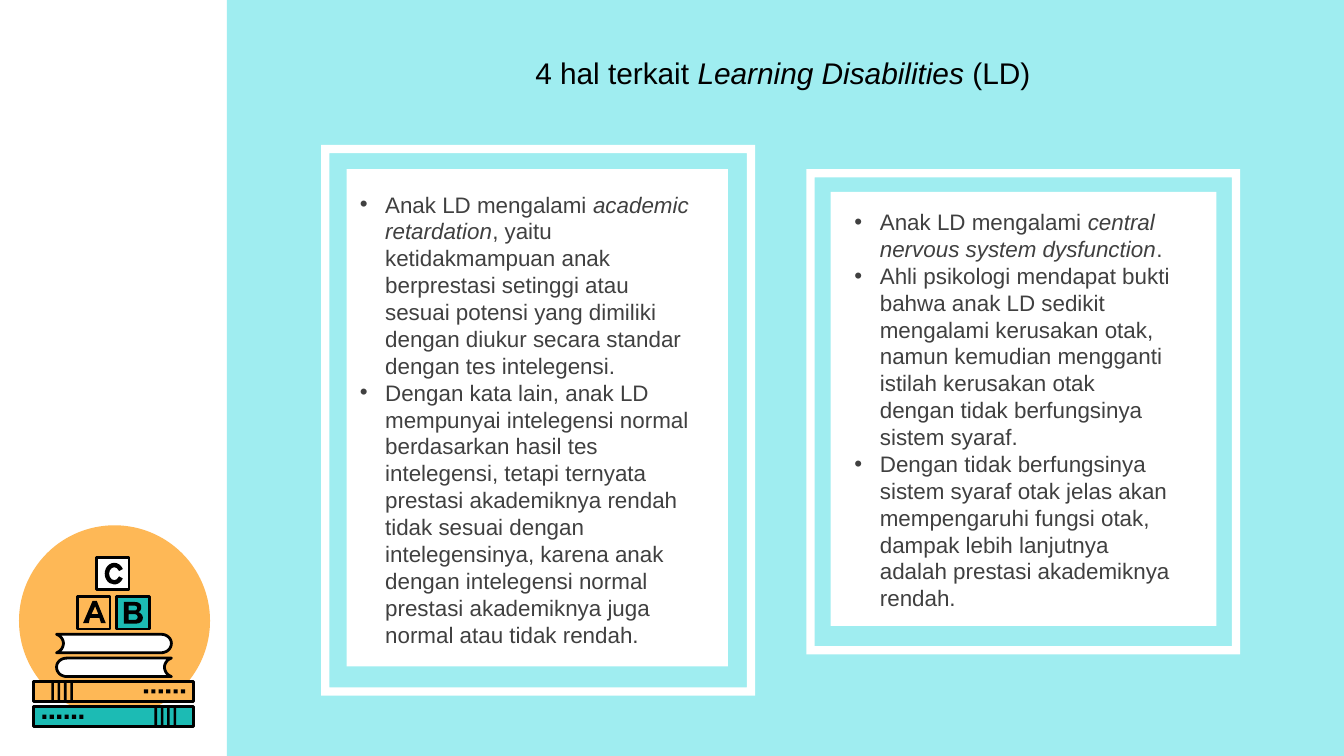
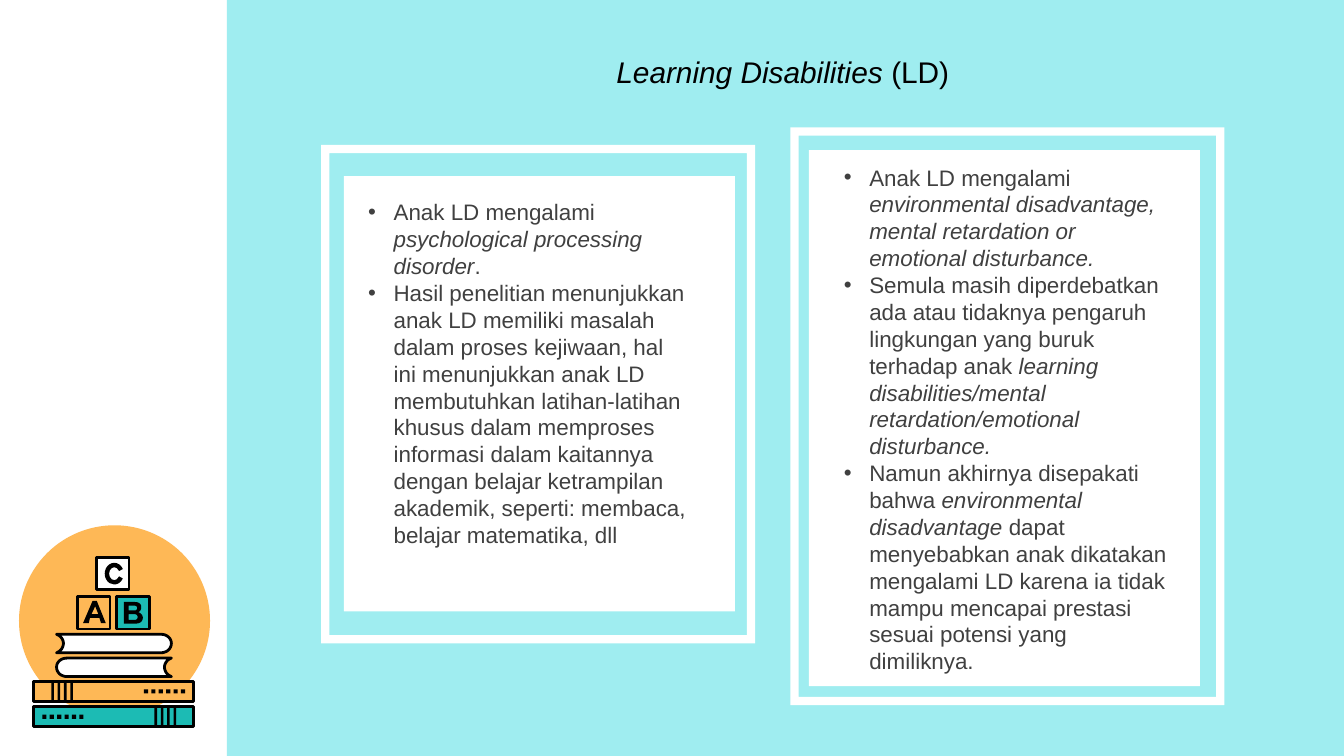
from lxml.etree import SubElement
from pptx import Presentation
from pptx.dml.color import RGBColor
from pptx.enum.shapes import MSO_SHAPE
from pptx.enum.text import PP_ALIGN
from pptx.oxml.ns import qn
from pptx.util import Cm, Pt

WHITE = RGBColor(0xFF, 0xFF, 0xFF)
BLACK = RGBColor(0, 0, 0)
GREY = RGBColor(0x40, 0x40, 0x40)
AQUA = RGBColor(0x9F, 0xED, 0xF0)
AMBER = RGBColor(0xFE, 0xB8, 0x56)
TEAL = RGBColor(0x1C, 0xBB, 0xB4)
FONT = "Arial"
WIDE, HIGH = 25.4, 14.29

# Outlines in cm: pairs are corners, sixes are Bezier curves.
LETTER_A = [
    [(1.75, 11.36), (1.83, 11.36), (2, 11.78), (1.91, 11.78), (1.88, 11.68),
     (1.7, 11.68), (1.68, 11.78), (1.57, 11.78)],
    [(1.8, 11.46), (1.73, 11.61), (1.86, 11.61)],
]
LETTER_B = [
    [(2.34, 11.38), (2.55, 11.38), (2.63, 11.38, 2.67, 11.42, 2.67, 11.47),
     (2.67, 11.53, 2.65, 11.56, 2.61, 11.57),
     (2.66, 11.59, 2.7, 11.62, 2.7, 11.68),
     (2.7, 11.76, 2.63, 11.79, 2.55, 11.79), (2.34, 11.79)],
    [(2.43, 11.45), (2.55, 11.45), (2.61, 11.45, 2.61, 11.54, 2.55, 11.54),
     (2.43, 11.54)],
    [(2.43, 11.61), (2.55, 11.61), (2.62, 11.61, 2.62, 11.72, 2.55, 11.72),
     (2.43, 11.72)],
]
BOOK = [(0, 0), (1.97, 0), (2.09, 0, 2.17, 0.08, 2.17, 0.17),
        (2.17, 0.27, 2.09, 0.35, 1.97, 0.35), (0, 0.35),
        (0.08, 0.32, 0.13, 0.25, 0.13, 0.17), (0.13, 0.1, 0.08, 0.03, 0, 0)]
BOOK_LONG = 2.17

# Each panel: frame box, card box, text box, bullets. Stars mark italics.
SLIDES = [
    ("4 hal terkait *Learning Disabilities *(LD)", (4.7, 0.91, 20.19, 1.24), [
        ((6.07, 2.74, 8.2, 10.41), (6.55, 3.2, 7.21, 9.4), (6.55, 3.48, 6.75, 8.97), [
            "Anak LD mengalami *academic retardation*, yaitu ketidakmampuan anak "
            "berprestasi setinggi atau sesuai potensi yang dimiliki dengan diukur "
            "secara standar dengan tes intelegensi.",
            "Dengan kata lain, anak LD mempunyai intelegensi normal berdasarkan "
            "hasil tes intelegensi, tetapi ternyata prestasi akademiknya rendah "
            "tidak sesuai dengan intelegensinya, karena anak dengan intelegensi "
            "normal prestasi akademiknya juga normal atau tidak rendah.",
        ]),
        ((15.24, 3.2, 8.2, 9.17), (15.7, 3.63, 7.29, 8.2), (15.9, 3.81, 6.53, 8.46), [
            "Anak LD mengalami *central nervous system dysfunction*.",
            "Ahli psikologi mendapat bukti bahwa anak LD sedikit mengalami "
            "kerusakan otak, namun kemudian mengganti istilah kerusakan otak "
            "dengan tidak berfungsinya sistem syaraf.",
            "Dengan tidak berfungsinya sistem syaraf otak jelas akan mempengaruhi "
            "fungsi otak, dampak lebih lanjutnya adalah prestasi akademiknya rendah.",
        ]),
    ]),
    ("*Learning Disabilities *(LD)", (4.7, 0.89, 20.19, 0.94), [
        ((6.07, 2.74, 8.2, 9.42), (6.5, 3.33, 7.39, 8.23), (6.71, 3.63, 6.58, 7.44), [
            "Anak LD mengalami *psychological processing disorder*.",
            "Hasil penelitian menunjukkan anak LD memiliki masalah dalam proses "
            "kejiwaan, hal ini menunjukkan anak LD membutuhkan latihan-latihan "
            "khusus dalam memproses informasi dalam kaitannya dengan belajar "
            "ketrampilan akademik, seperti: membaca, belajar matematika, dll",
        ]),
        ((14.94, 2.41, 8.2, 10.92), (15.29, 2.84, 7.39, 10.13), (15.7, 2.97, 6.65, 10.01), [
            "Anak LD mengalami *environmental disadvantage, mental retardation or "
            "emotional disturbance.*",
            "Semula masih diperdebatkan ada atau tidaknya pengaruh lingkungan yang "
            "buruk terhadap anak *learning disabilities/mental "
            "retardation/emotional disturbance.*",
            "Namun akhirnya disepakati bahwa *environmental disadvantage *dapat "
            "menyebabkan anak dikatakan mengalami LD karena ia tidak mampu "
            "mencapai prestasi sesuai potensi yang dimiliknya.",
        ]),
    ]),
]


def paint(shape, fill, edge=False):
    shape.shadow.inherit = False
    shape.fill.solid()
    shape.fill.fore_color.rgb = fill
    if edge:
        shape.line.color.rgb = BLACK
        shape.line.width = Pt(1.5)
    else:
        shape.line.fill.background()


def add_form(slide, kind, box, fill, edge=False):
    shape = slide.shapes.add_shape(kind, *map(Cm, box))
    paint(shape, fill, edge)
    return shape


def add_rect(slide, box, fill, edge=False):
    return add_form(slide, MSO_SHAPE.RECTANGLE, box, fill, edge)


def flatten(path, steps=8):
    """Turn corners and Bezier curves into a list of plain points."""
    points = []
    for item in path:
        if len(item) == 2:
            points.append(item)
            continue
        x, y = points[-1]
        for step in range(1, steps + 1):
            t = step / steps
            u = 1 - t
            mix = (u ** 3, 3 * u * u * t, 3 * u * t * t, t ** 3)
            points.append((sum(m * v for m, v in zip(mix, (x, *item[::2]))),
                           sum(m * v for m, v in zip(mix, (y, *item[1::2])))))
    return points


def add_path(slide, loops, fill, edge=False):
    """Draw closed loops of points as one shape; inner loops are holes."""
    pen = None
    for loop in loops:
        first, *rest = [(Cm(x), Cm(y)) for x, y in loop]
        if pen is None:
            pen = slide.shapes.build_freeform(*first)
        else:
            pen.move_to(*first)
        pen.add_line_segments(rest, close=True)
    paint(pen.convert_to_shape(), fill, edge)


def add_spine(slide, top, fill, flip):
    """Draw a thick book seen from its back, with four bars and six dots."""
    left, wide, high = 0.64, 3.02, 0.38
    add_rect(slide, (left, top, wide, high), fill, True)
    marks = [(0.97 + 0.12 * i, top, 0.05, high) for i in range(4)]
    marks += [(2.72 + 0.14 * i, top + 0.15, 0.08, 0.08) for i in range(6)]
    for x, y, w, h in marks:
        if flip:
            x = 2 * left + wide - x - w
        add_rect(slide, (x, y, w, h), BLACK)


def add_book(slide, top, flip):
    points = flatten(BOOK)
    if flip:
        points = [(BOOK_LONG - x, y) for x, y in points]
    add_path(slide, [[(1.07 + x, top + y) for x, y in points]], WHITE, True)


def add_badge(slide):
    add_form(slide, MSO_SHAPE.OVAL, (0.36, 9.93, 3.61, 3.61), AMBER)
    add_spine(slide, 12.88, AMBER, False)
    add_spine(slide, 13.36, TEAL, True)
    for x, y, fill in ((1.47, 11.28, AMBER), (2.21, 11.28, TEAL), (1.83, 10.54, WHITE)):
        add_rect(slide, (x, y, 0.61, 0.61), fill, True)
    for letter in (LETTER_A, LETTER_B):
        add_path(slide, [flatten(loop) for loop in letter], BLACK)
    arc = add_form(slide, MSO_SHAPE.BLOCK_ARC, (1.98, 10.64, 0.36, 0.41), BLACK)
    for i, value in enumerate((17.57, 198.9, 0.23)):
        arc.adjustments[i] = value
    add_book(slide, 11.99, False)
    add_book(slide, 12.44, True)


def add_text(slide, box):
    frame = slide.shapes.add_textbox(*map(Cm, box)).text_frame
    frame.word_wrap = True
    return frame


def fill_runs(para, text, size, color):
    """Add the text as runs, with italics between stars."""
    for i, part in enumerate(text.split("*")):
        if part:
            run = para.add_run()
            run.text = part
            run.font.name = FONT
            run.font.size = Pt(size)
            run.font.color.rgb = color
            run.font.italic = i % 2 == 1


def add_title(slide, text, box):
    para = add_text(slide, box).paragraphs[0]
    para.alignment = PP_ALIGN.CENTER
    fill_runs(para, text, 16, BLACK)


def add_list(slide, items, box):
    frame = add_text(slide, box)
    for i, item in enumerate(items):
        para = frame.add_paragraph() if i else frame.paragraphs[0]
        para.line_spacing = Pt(14.4)
        props = para._p.get_or_add_pPr()
        props.set("marL", str(Cm(0.48)))
        props.set("indent", str(-Cm(0.48)))
        SubElement(props, qn("a:buFont")).set("typeface", FONT)
        SubElement(props, qn("a:buChar")).set("char", "•")
        fill_runs(para, item, 12, GREY)


def add_panel(slide, frame, card):
    border = add_form(slide, MSO_SHAPE.FRAME, frame, WHITE)
    border.adjustments[0] = 0.019
    add_rect(slide, card, WHITE)


def main():
    deck = Presentation()
    deck.slide_width, deck.slide_height = Cm(WIDE), Cm(HIGH)
    for title, place, panels in SLIDES:
        slide = deck.slides.add_slide(deck.slide_layouts[6])
        add_rect(slide, (4.29, 0, WIDE - 4.29, HIGH), AQUA)
        add_badge(slide)
        add_title(slide, title, place)
        for frame, card, box, items in panels:
            add_panel(slide, frame, card)
            add_list(slide, items, box)
    deck.save("out.pptx")


if __name__ == "__main__":
    main()
